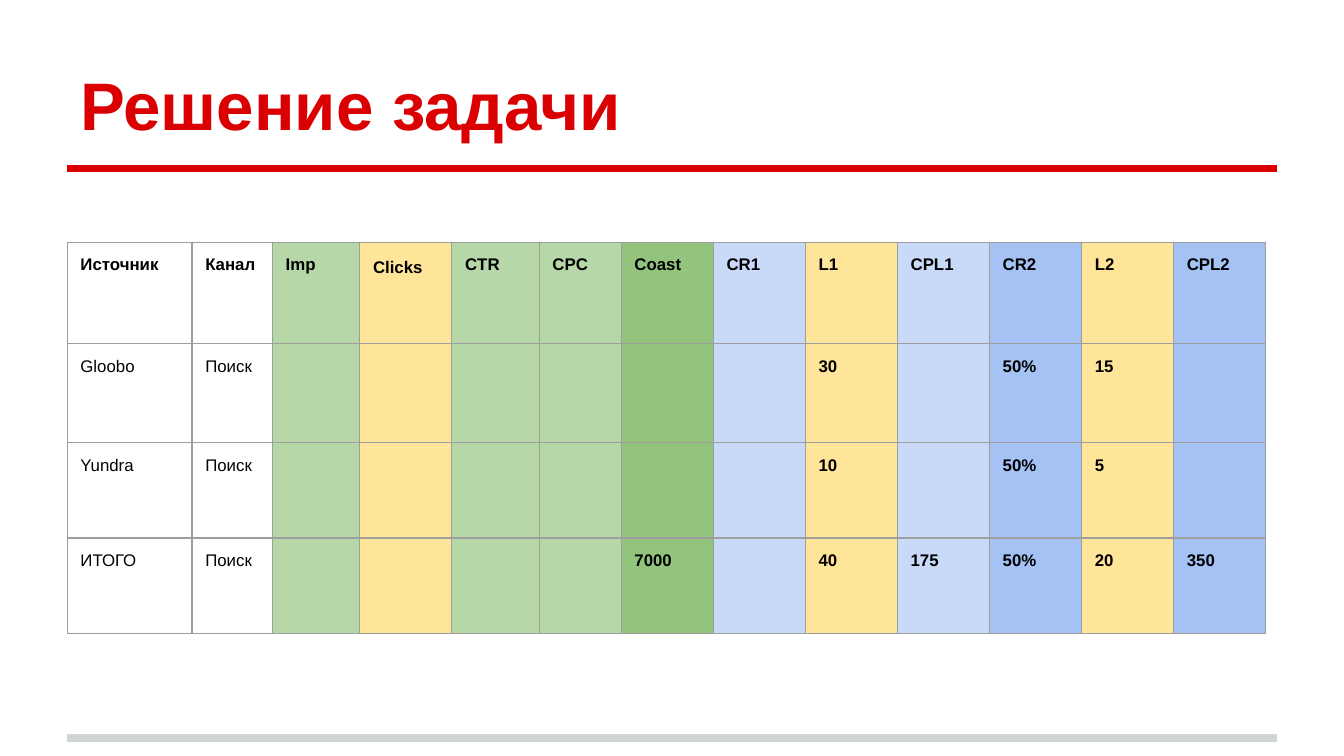
from lxml import etree
from pptx import Presentation
from pptx.dml.color import RGBColor
from pptx.enum.shapes import MSO_CONNECTOR
from pptx.enum.text import MSO_ANCHOR
from pptx.oxml.ns import qn
from pptx.util import Cm, Pt

STRAIGHT = MSO_CONNECTOR.STRAIGHT
BOTTOM = MSO_ANCHOR.BOTTOM

RED = RGBColor(0xDA, 0x00, 0x02)
GRAY = RGBColor(0xCF, 0xD4, 0xD4)
EDGE = RGBColor(0x9E, 0x9E, 0x9E)
BLACK = RGBColor(0x00, 0x00, 0x00)
MINT = RGBColor(0xB6, 0xD7, 0xA8)
GREEN = RGBColor(0x93, 0xC4, 0x7D)
YELLOW = RGBColor(0xFF, 0xE5, 0x99)
PALE = RGBColor(0xC9, 0xDA, 0xF8)
BLUE = RGBColor(0xA4, 0xC2, 0xF4)

FONT = "Arial"
LEFT = Cm(1.27)
WIDTH = Cm(22.86)
PAD = Cm(0.25)

# Column heading, width in cm, fill
COLUMNS = [
    ("Источник", 2.36, None),
    ("Канал", 1.52, None),
    ("Imp", 1.65, MINT),
    ("Сlicks", 1.74, YELLOW),
    ("CTR", 1.65, MINT),
    ("CPC", 1.55, MINT),
    ("Coast", 1.74, GREEN),
    ("CR1", 1.74, PALE),
    ("L1", 1.74, YELLOW),
    ("CPL1", 1.74, PALE),
    ("CR2", 1.74, BLUE),
    ("L2", 1.74, YELLOW),
    ("CPL2", 1.74, BLUE),
]
HEIGHTS = [1.92, 1.87, 1.8, 1.8]
LABELS = 2  # leading columns with plain text

# Each source with its known figures
SOURCES = [
    ("Gloobo", {"L1": "30", "CR2": "50%", "L2": "15"}),
    ("Yundra", {"L1": "10", "CR2": "50%", "L2": "5"}),
    ("ИТОГО", {"Coast": "7000", "L1": "40", "CPL1": "175",
               "CR2": "50%", "L2": "20", "CPL2": "350"}),
]
CHANNEL = "Поиск"


def style_text(para, size, color, bold):
    for run in para.runs:
        run.font.name = FONT
        run.font.size = Pt(size)
        run.font.bold = bold
        run.font.color.rgb = color


def add_rule(slide, top, color):
    rule = slide.shapes.add_connector(STRAIGHT, LEFT, top, LEFT + WIDTH, top)
    rule.line.color.rgb = color
    rule.line.width = Pt(4)
    etree.SubElement(rule._element.spPr, qn("a:effectLst"))


def add_title(slide, text):
    box = slide.shapes.add_textbox(LEFT, Cm(0.58), WIDTH, Cm(2.39))
    frame = box.text_frame
    frame.word_wrap = True
    frame.vertical_anchor = BOTTOM
    frame.margin_left = frame.margin_right = PAD
    frame.margin_top = frame.margin_bottom = PAD
    frame.text = text
    style_text(frame.paragraphs[0], 36, RED, True)


def add_edges(cell):
    props = cell._tc.get_or_add_tcPr()
    for side in ("a:lnL", "a:lnR", "a:lnT", "a:lnB"):
        line = etree.SubElement(props, qn(side), w=str(Pt(0.75)))
        fill = etree.SubElement(line, qn("a:solidFill"))
        etree.SubElement(fill, qn("a:srgbClr"), val=str(EDGE))


def fill_cell(cell, text, color, bold):
    cell.margin_left = cell.margin_right = PAD
    cell.margin_top = cell.margin_bottom = PAD
    add_edges(cell)
    if color is None:
        cell.fill.background()
    else:
        cell.fill.solid()
        cell.fill.fore_color.rgb = color
    if text:
        cell.text_frame.text = text
        style_text(cell.text_frame.paragraphs[0], 9, BLACK, bold)


def add_grid(slide):
    heads = [head for head, _, _ in COLUMNS]
    rows = [heads]
    for source, values in SOURCES:
        figures = [values.get(head, "") for head in heads[LABELS:]]
        rows.append([source, CHANNEL] + figures)

    wide = Cm(sum(width for _, width, _ in COLUMNS))
    frame = slide.shapes.add_table(len(rows), len(COLUMNS), LEFT, Cm(4.58),
                                   wide, Cm(sum(HEIGHTS)))
    table = frame.table
    table.first_row = table.horz_banding = False
    for row, height in zip(table.rows, HEIGHTS):
        row.height = Cm(height)
    for col, (_, width, color) in enumerate(COLUMNS):
        table.columns[col].width = Cm(width)
        for row, texts in enumerate(rows):
            bold = row == 0 or col >= LABELS
            fill_cell(table.cell(row, col), texts[col], color, bold)

    # The clicks heading has looser line spacing
    clicks = table.cell(0, heads.index("Сlicks"))
    clicks.text_frame.paragraphs[0].line_spacing = 1.15


def main():
    deck = Presentation()
    deck.slide_width = Cm(25.4)
    deck.slide_height = Cm(14.29)
    slide = deck.slides.add_slide(deck.slide_layouts[6])

    # Rules at the foot and under the title
    add_rule(slide, Cm(13.95), GRAY)
    add_rule(slide, Cm(3.18), RED)

    # Title and table
    add_title(slide, "Решение задачи")
    add_grid(slide)
    deck.save("out.pptx")


if __name__ == "__main__":
    main()
